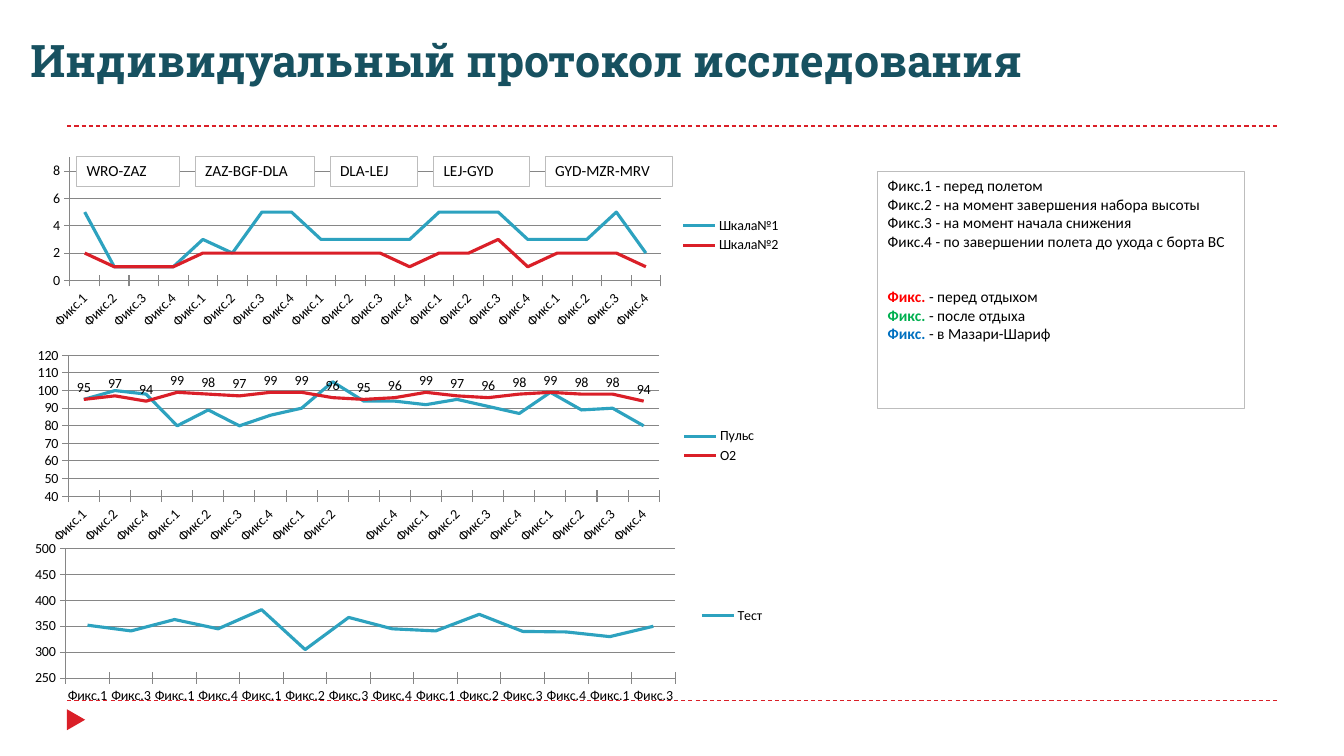
"""Build the slide with the individual study protocol: three line charts and a legend of fixations."""
import lxml.etree
import pptx
import pptx.chart.data
import pptx.dml.color
import pptx.enum.chart
import pptx.enum.dml
import pptx.enum.shapes
import pptx.enum.text
import pptx.oxml.ns
import pptx.util

Pt = pptx.util.Pt
RGBColor = pptx.dml.color.RGBColor
qn = pptx.oxml.ns.qn

WHITE = RGBColor(0xFF, 0xFF, 0xFF)
BLACK = RGBColor(0x00, 0x00, 0x00)
GRID_GREY = RGBColor(0x86, 0x86, 0x86)
BORDER_GREY = RGBColor(0xBD, 0xBD, 0xBD)
TITLE_TEAL = RGBColor(0x17, 0x51, 0x60)
BLUE = RGBColor(0x2D, 0xA2, 0xBF)
RED = RGBColor(0xDA, 0x1F, 0x28)
BEFORE_REST = RGBColor(0xFF, 0x00, 0x00)
AFTER_REST = RGBColor(0x00, 0xB0, 0x50)
ON_SITE = RGBColor(0x00, 0x70, 0xC0)


def add_box(left, top, width, height):
    """Add a white bordered rectangle and return its text frame."""
    box = slide.shapes.add_shape(
        pptx.enum.shapes.MSO_SHAPE.RECTANGLE, Pt(left), Pt(top), Pt(width), Pt(height))
    box.shadow.inherit = False
    box.fill.solid()
    box.fill.fore_color.rgb = WHITE
    box.line.color.rgb = BORDER_GREY
    box.line.width = Pt(0.75)
    box.text_frame.word_wrap = True
    box.text_frame.vertical_anchor = pptx.enum.text.MSO_ANCHOR.TOP
    return box.text_frame


def style_paragraph(paragraph):
    """Give a paragraph the body text style."""
    paragraph.alignment = pptx.enum.text.PP_ALIGN.LEFT
    paragraph.font.name = "Calibri"
    paragraph.font.size = Pt(11)
    paragraph.font.color.rgb = BLACK


presentation = pptx.Presentation()
presentation.slide_width = Pt(960)
presentation.slide_height = Pt(540)
slide = presentation.slides.add_slide(presentation.slide_layouts[6])

for rule_y in (500.4, 90):
    rule = slide.shapes.add_connector(
        pptx.enum.shapes.MSO_CONNECTOR.STRAIGHT, Pt(48), Pt(rule_y), Pt(912), Pt(rule_y))
    rule.line.color.rgb = RED
    rule.line.width = Pt(0.75)
    rule.line.dash_style = pptx.enum.dml.MSO_LINE.DASH
    lxml.etree.SubElement(rule._element.spPr, qn("a:effectLst"))

marker = slide.shapes.add_shape(
    pptx.enum.shapes.MSO_SHAPE.ISOSCELES_TRIANGLE, Pt(46.8), Pt(507.6), Pt(15), Pt(13))
marker.rotation = 90
marker.shadow.inherit = False
marker.fill.solid()
marker.fill.fore_color.rgb = RED
marker.line.fill.background()

title = slide.shapes.add_textbox(Pt(15), Pt(18), Pt(930), Pt(47.5)).text_frame
title.word_wrap = True
title.vertical_anchor = pptx.enum.text.MSO_ANCHOR.BOTTOM
heading = title.paragraphs[0]
heading.text = "Индивидуальный протокол исследования"
heading.font.name = "Roboto Slab"
heading.font.size = Pt(32)
heading.font.bold = True
heading.font.color.rgb = TITLE_TEAL

measurements = [
    {"frame": (32.4, 94.3, 532.8, 147.6), "plot": (0.033, 0.123, 0.792, 0.596),
     "scale": (0, 9, 2), "label_angle": -45, "fixations": "1234" * 5,
     "series": [
         ("Шкала№1", BLUE, (5, 1, 1, 1, 3, 2, 5, 5, 3, 3, 3, 3, 5, 5, 5, 3, 3, 3, 5, 2)),
         ("Шкала№2", RED, (2, 1, 1, 1, 2, 2, 2, 2, 2, 2, 2, 1, 2, 2, 3, 1, 2, 2, 2, 1))]},
    {"frame": (20.9, 241.9, 527, 153.4), "plot": (0.053, 0.078, 0.801, 0.656),
     "scale": (40, 120, 10), "label_angle": -45, "fixations": "124123412-412341234",
     "series": [
         ("Пульс", BLUE, (95, 100, 98, 80, 89, 80, 86, 90, 105, 94,
                          94, 92, 95, 91, 87, 99, 89, 90, 80)),
         ("O2", RED, (95, 97, 94, 99, 98, 97, 99, 99, 96, 95,
                      96, 99, 97, 96, 98, 99, 98, 98, 94))]},
    {"frame": (20.9, 378, 532.8, 124.6), "plot": (0.049, 0.112, 0.817, 0.748),
     "scale": (250, 500, 50), "label_angle": 0, "fixations": "13141234123413",
     "series": [
         ("Тест", BLUE, (352, 341, 363, 345, 382, 305, 367, 345, 341, 373, 340, 339, 330, 350))]},
]

for measurement in measurements:
    chart_data = pptx.chart.data.CategoryChartData()
    chart_data.categories = [
        "" if number == "-" else f"Фикс.{number}" for number in measurement["fixations"]]
    for name, colour, values in measurement["series"]:
        chart_data.add_series(name, values)
    chart = slide.shapes.add_chart(
        pptx.enum.chart.XL_CHART_TYPE.LINE,
        *[Pt(length) for length in measurement["frame"]], chart_data).chart
    chart.has_title = False
    chart.font.name = "Calibri"
    chart.font.size = Pt(10)
    chart.font.color.rgb = BLACK
    chart.has_legend = True
    chart.legend.position = pptx.enum.chart.XL_LEGEND_POSITION.RIGHT
    chart.legend.include_in_layout = False
    chart.plots[0].vary_by_categories = False

    for axis in (chart.category_axis, chart.value_axis):
        axis.major_tick_mark = pptx.enum.chart.XL_TICK_MARK.CROSS
        axis.format.line.color.rgb = GRID_GREY
        axis.format.line.width = Pt(0.75)
    chart.category_axis.tick_labels.font.size = Pt(10)
    category_text = chart.category_axis._element.find(qn("c:txPr")).find(qn("a:bodyPr"))
    category_text.set("rot", str(measurement["label_angle"] * 60000))
    category_text.set("vert", "horz")
    value_axis = chart.value_axis
    value_axis.minimum_scale, value_axis.maximum_scale, value_axis.major_unit = measurement["scale"]
    value_axis.has_major_gridlines = True
    value_axis.major_gridlines.format.line.color.rgb = GRID_GREY
    value_axis.major_gridlines.format.line.width = Pt(0.75)

    for line, (name, colour, values) in zip(chart.plots[0].series, measurement["series"]):
        line.smooth = False
        line.marker.style = pptx.enum.chart.XL_MARKER_STYLE.NONE
        line.format.line.color.rgb = colour
        line.format.line.width = Pt(2.25)
        if name == "O2":
            line.data_labels.show_value = True
            line.data_labels.position = pptx.enum.chart.XL_LABEL_POSITION.ABOVE

    plot_area = chart._chartSpace.chart.plotArea
    for old_layout in plot_area.findall(qn("c:layout")):
        plot_area.remove(old_layout)
    layout = lxml.etree.Element(qn("c:layout"))
    plot_area.insert(0, layout)
    manual = lxml.etree.SubElement(layout, qn("c:manualLayout"))
    settings = [("layoutTarget", "inner"), ("xMode", "edge"), ("yMode", "edge")]
    settings += zip("xywh", measurement["plot"])
    for tag, value in settings:
        lxml.etree.SubElement(manual, qn(f"c:{tag}")).set("val", str(value))

fixation_key = add_box(627, 122.4, 262, 169.2)
key_lines = [
    ("", "Фикс.1 - перед полетом", BLACK),
    ("", "Фикс.2 - на момент завершения набора высоты", BLACK),
    ("", "Фикс.3 - на момент начала снижения", BLACK),
    ("", "Фикс.4 - по завершении полета до ухода с борта ВС", BLACK),
    ("Фикс. ", "- перед отдыхом", BEFORE_REST),
    ("Фикс.", " - после отдыха", AFTER_REST),
    ("Фикс.", " - в Мазари-Шариф", ON_SITE),
]
for index, (mark, meaning, colour) in enumerate(key_lines):
    paragraph = fixation_key.add_paragraph() if index else fixation_key.paragraphs[0]
    style_paragraph(paragraph)
    if mark:
        mark_run = paragraph.add_run()
        mark_run.text = mark
        mark_run.font.bold = True
        mark_run.font.color.rgb = colour
    paragraph.add_run().text = meaning
    if colour == BEFORE_REST:
        paragraph.space_before = Pt(26.4)

route_left = 54.7
for route, route_width in [("WRO-ZAZ", 73.5), ("ZAZ-BGF-DLA", 85), ("DLA-LEJ", 62.6),
                           ("LEJ-GYD", 68.4), ("GYD-MZR-MRV", 90.7)]:
    route_text = add_box(route_left, 111.6, route_width, 21.6).paragraphs[0]
    route_text.text = route
    style_paragraph(route_text)
    route_left += route_width + 11.3

presentation.save("out.pptx")
